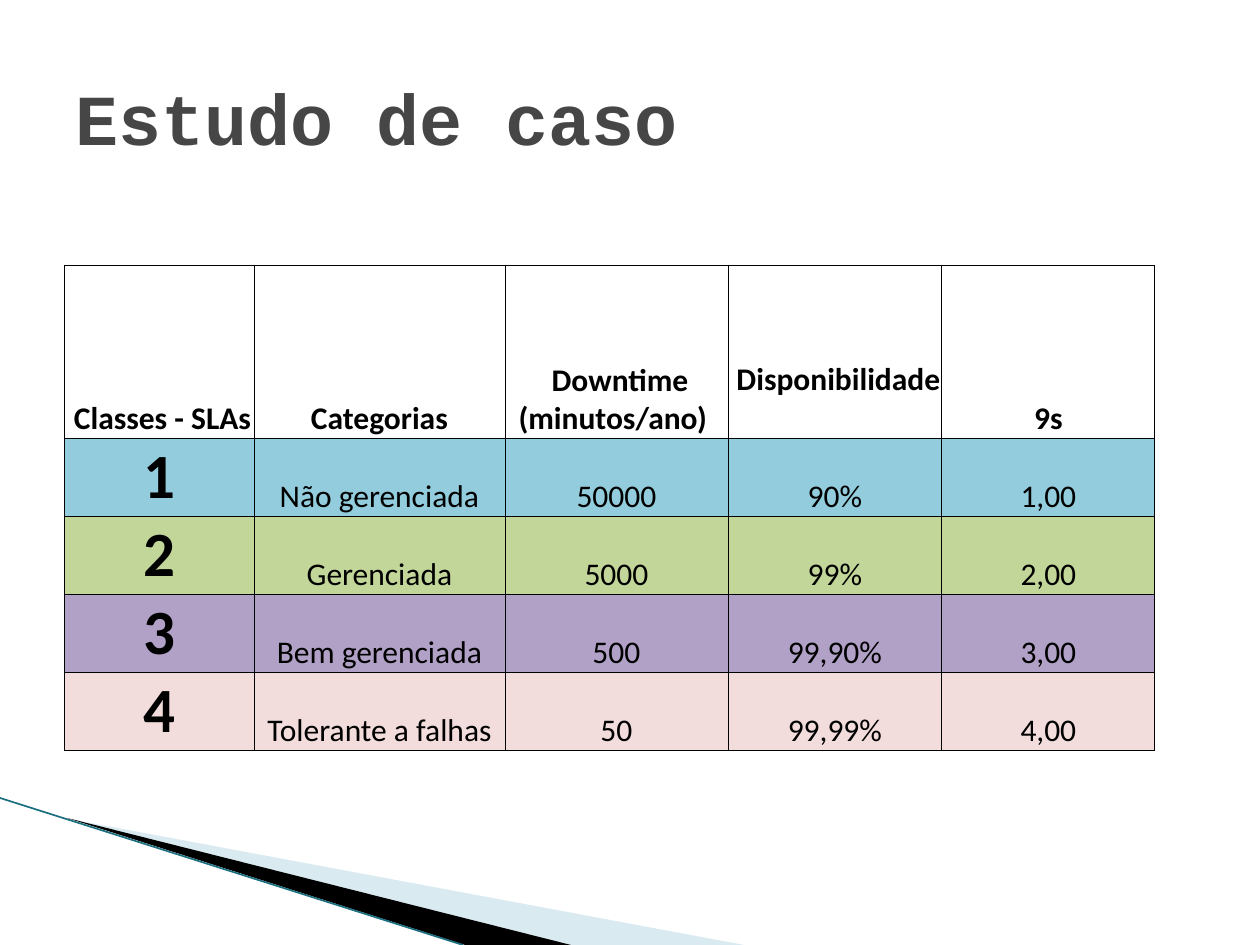
"""Build the case study slide with its table of availability classes."""
from lxml.etree import SubElement
from pptx import Presentation
from pptx.dml.color import RGBColor
from pptx.enum.shapes import MSO_CONNECTOR as Connector
from pptx.enum.text import MSO_ANCHOR as Anchor, PP_ALIGN as Align
from pptx.oxml.ns import qn
from pptx.util import Emu, Pt

SCALE = 914400 / 126
COLORS = {
    "title": "464646", "text": "000000", "border": "000000",
    "header": "FFFFFF", "unmanaged": "93CDDD", "managed": "C2D69A",
    "well_managed": "B2A1C7", "tolerant": "F2DDDC",
    "pale_wedge": "A0CBDC", "dark_wedge": "000000", "edge": "1B6F80",
}
COLUMNS = [190, 251, 223, 214, 213]
HEADER_HEIGHT, ROW_HEIGHT = 173, 78
HEADERS = [" Classes - SLAs ", " Categorias ", " Downtime (minutos/ano) ",
           " Disponibilidade", " 9s "]
ROWS = [
    ("unmanaged", ["1", "Não gerenciada", "50000", "90%", "1,00"]),
    ("managed", ["2", "Gerenciada", "5000", "99%", "2,00"]),
    ("well_managed", ["3", "Bem gerenciada", "500", "99,90%", "3,00"]),
    ("tolerant", ["4", "Tolerante a falhas", "50", "99,99%", "4,00"]),
]


def px(length):
    return Emu(round(length * SCALE))


def color(name):
    return RGBColor.from_string(COLORS[name])


def add_span(para, text, font, size, name, bold):
    span = para.add_run()
    span.text = text
    span.font.name, span.font.size, span.font.bold = font, Pt(size), bold
    span.font.color.rgb = color(name)


def add_wedge(page, points, name, opacity=100):
    builder = page.shapes.build_freeform(*points[0], scale=SCALE)
    builder.add_line_segments(points[1:], close=True)
    wedge = builder.convert_to_shape()
    wedge.shadow.inherit = False
    wedge.fill.solid()
    wedge.fill.fore_color.rgb = color(name)
    wedge.line.fill.background()
    if opacity < 100:
        tone = wedge.fill._xPr.find(".//" + qn("a:srgbClr"))
        SubElement(tone, qn("a:alpha"), val=str(opacity * 1000))


def add_edge(page, start, end):
    edge = page.shapes.add_connector(
        Connector.STRAIGHT, *map(px, start), *map(px, end))
    edge.line.color.rgb = color("edge")
    edge.line.width = Pt(0.95)
    SubElement(edge._element.spPr, qn("a:effectLst"))


def add_title(page, text):
    box = page.shapes.add_textbox(px(63), px(38), px(1134), px(158))
    frame = box.text_frame
    frame.word_wrap = True
    frame.vertical_anchor = Anchor.MIDDLE
    add_span(frame.paragraphs[0], text, "Courier New", 41, "title", True)


def add_borders(cell):
    properties = cell._tc.get_or_add_tcPr()
    for side in ("lnL", "lnR", "lnT", "lnB"):
        line = SubElement(properties, qn("a:" + side), w=str(Pt(0.5)))
        fill = SubElement(line, qn("a:solidFill"))
        SubElement(fill, qn("a:srgbClr"), val=COLORS["border"])


def fill_cell(cell, text, fill, size, bold, bottom=0):
    add_borders(cell)
    cell.fill.solid()
    cell.fill.fore_color.rgb = color(fill)
    cell.vertical_anchor = Anchor.BOTTOM
    cell.margin_left = cell.margin_right = cell.margin_top = px(1)
    cell.margin_bottom = px(bottom)
    para = cell.text_frame.paragraphs[0]
    para.alignment = Align.CENTER
    add_span(para, text, "Calibri", size, "text", bold)


def add_class_table(page):
    height = HEADER_HEIGHT + ROW_HEIGHT * len(ROWS)
    frame = page.shapes.add_table(
        len(ROWS) + 1, len(COLUMNS),
        px(64), px(265), px(sum(COLUMNS)), px(height))
    table = frame.table
    table.first_row = table.horz_banding = False
    for column, width in zip(table.columns, COLUMNS):
        column.width = px(width)
    for index, row in enumerate(table.rows):
        row.height = px(ROW_HEIGHT if index else HEADER_HEIGHT)
    for index, text in enumerate(HEADERS):
        bottom = 39 if "Disponibilidade" in text else 0
        fill_cell(table.cell(0, index), text, "header", 18, True, bottom)
    for row, (fill, values) in enumerate(ROWS, 1):
        for column, text in enumerate(values):
            is_class = column == 0
            size = 36 if is_class else 18
            fill_cell(table.cell(row, column), text, fill, size, is_class)


def main():
    deck = Presentation()
    deck.slide_width, deck.slide_height = px(1260), px(945)
    page = deck.slides.add_slide(deck.slide_layouts[6])
    add_wedge(page, [(69, 819), (744, 945), (570, 945)], "pale_wedge", 40)
    add_wedge(page, [(67, 818), (571, 945), (465, 945)], "dark_wedge")
    add_edge(page, (0, 798), (463, 945))
    add_title(page, "Estudo de caso")
    add_class_table(page)
    deck.save("out.pptx")


if __name__ == "__main__":
    main()
